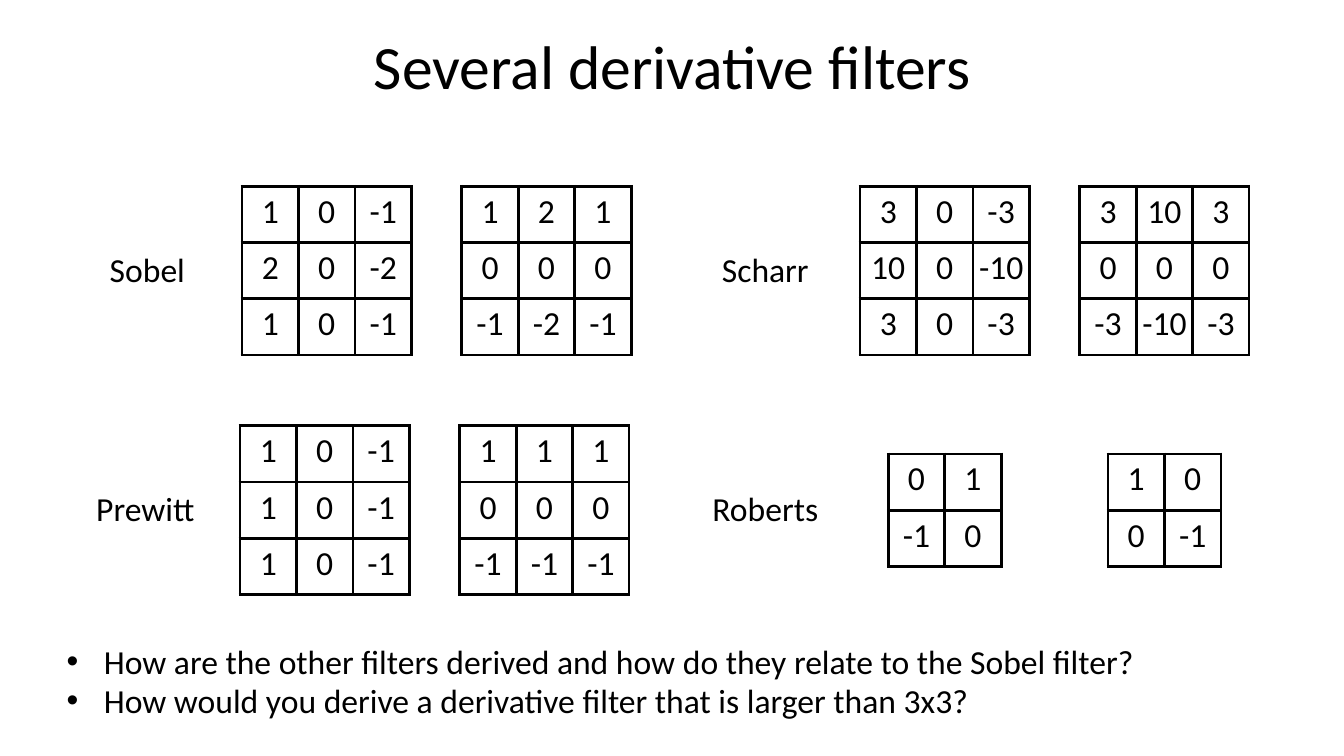
from dataclasses import dataclass

from lxml.etree import SubElement
from pptx import Presentation
from pptx.dml.color import RGBColor
from pptx.enum.text import MSO_ANCHOR, MSO_AUTO_SIZE, PP_ALIGN
from pptx.oxml.ns import qn
from pptx.util import Inches, Length, Pt

Mask = tuple[tuple[int, ...], ...]


@dataclass(frozen=True)
class Theme:
    font: str = "Calibri"
    ink: str = "000000"
    head: int = 44
    text: int = 24
    line: float = 2.25


@dataclass(frozen=True)
class Filter:
    """A named pair of masks; mid and row give the centre of the first mask."""
    name: str
    mid: float
    row: float
    masks: tuple[Mask, Mask]


THEME = Theme()
WIDTH, HEIGHT = Inches(13.33), Inches(7.5)

# Shares of the slide, in percent
CELL_W, CELL_H = 4.2, 7.45
STEP = 16.35       # from one mask of a pair to the next
LABEL_GAP = 13.35  # from the label's centre to the first mask's
LABEL_W, LABEL_H = 8.1, 5.73
LEFT, RIGHT = 24.31, 70.29
UPPER, LOWER = 35.8, 67.5


def wide(share: float) -> Length:
    return Length(round(WIDTH * share / 100))


def tall(share: float) -> Length:
    return Length(round(HEIGHT * share / 100))


def pair(blur: tuple[int, ...]) -> tuple[Mask, Mask]:
    """Cross a smoothing column with a central difference, both ways round."""
    across = tuple(tuple(b * d for d in (1, 0, -1)) for b in blur)
    return across, tuple(zip(*across))


FILTERS = (
    Filter("Sobel", LEFT, UPPER, pair((1, 2, 1))),
    Filter("Scharr", RIGHT, UPPER, pair((3, 10, 3))),
    Filter("Prewitt", LEFT - 0.15, LOWER, pair((1, 1, 1))),
    Filter("Roberts", RIGHT, LOWER, (((0, 1), (-1, 0)), ((1, 0), (0, -1)))),
)
ASKS = (
    "How are the other filters derived and how do they relate to the Sobel filter?",
    "How would you derive a derivative filter that is larger than 3x3?",
)


def write(frame, *lines: str, size: float = THEME.text, align=PP_ALIGN.CENTER,
          before: float = 0, pitch: float | None = None) -> None:
    for i, line in enumerate(lines):
        para = frame.paragraphs[0] if i == 0 else frame.add_paragraph()
        para.alignment = align
        para.space_before = Pt(before)
        if pitch:
            para.line_spacing = Pt(pitch)
        run = para.add_run()
        run.text = line
        run.font.name = THEME.font
        run.font.size = Pt(size)
        run.font.color.rgb = RGBColor.from_string(THEME.ink)


def place(shape, left: float, top: float, width: float, height: float) -> None:
    """Set a text shape on the slide, with tight insets."""
    shape.left, shape.top = wide(left), tall(top)
    shape.width, shape.height = wide(width), tall(height)
    frame = shape.text_frame
    frame.margin_left = frame.margin_right = frame.margin_bottom = 0
    frame.margin_top = Inches(0.01)
    frame.vertical_anchor = MSO_ANCHOR.TOP
    frame.auto_size = MSO_AUTO_SIZE.NONE
    frame.word_wrap = True


def frame_cell(cell) -> None:
    props = cell._tc.get_or_add_tcPr()
    for side in ("a:lnL", "a:lnR", "a:lnT", "a:lnB"):
        edge = SubElement(props, qn(side), w=str(Pt(THEME.line)))
        fill = SubElement(edge, qn("a:solidFill"))
        SubElement(fill, qn("a:srgbClr"), val=THEME.ink)
    cell.fill.background()


def draw_mask(slide, mask: Mask, mid: float, row: float) -> None:
    size = len(mask)
    width, height = size * CELL_W, size * CELL_H
    table = slide.shapes.add_table(
        size, size, wide(mid - width / 2), tall(row - height / 2),
        wide(width), tall(height)).table
    table.first_row = table.horz_banding = False
    for r, values in enumerate(mask):
        for c, value in enumerate(values):
            cell = table.cell(r, c)
            cell.margin_left = cell.margin_right = cell.margin_bottom = 0
            cell.margin_top = Inches(0.05)
            frame_cell(cell)
            write(cell.text_frame, str(value), before=3.6)


def draw_filter(slide, item: Filter) -> None:
    label = slide.shapes.add_textbox(0, 0, 0, 0)
    place(label, item.mid - LABEL_GAP - LABEL_W / 2,
          item.row - LABEL_H / 2 - 0.2, LABEL_W, LABEL_H)
    write(label.text_frame, item.name, before=1)
    for i, mask in enumerate(item.masks):
        draw_mask(slide, mask, item.mid + i * STEP, item.row)


def main() -> None:
    deck = Presentation()
    deck.slide_width, deck.slide_height = WIDTH, HEIGHT
    slide = deck.slides.add_slide(deck.slide_layouts[1])

    title = slide.shapes.title
    place(title, 4.2, 3.6, 91.67, 10.13)
    write(title.text_frame, "Several derivative filters", size=THEME.head, before=1)

    for item in FILTERS:
        draw_filter(slide, item)

    body = slide.placeholders[1]
    place(body, 4.8, 84.93, 79.67, 10.53)
    write(body.text_frame, *ASKS, align=PP_ALIGN.LEFT, pitch=27.5)
    for para in body.text_frame.paragraphs:
        props = para._p.get_or_add_pPr()
        props.set("marL", str(Inches(0.39)))
        props.set("indent", str(-Inches(0.37)))

    deck.save("out.pptx")


if __name__ == "__main__":
    main()
